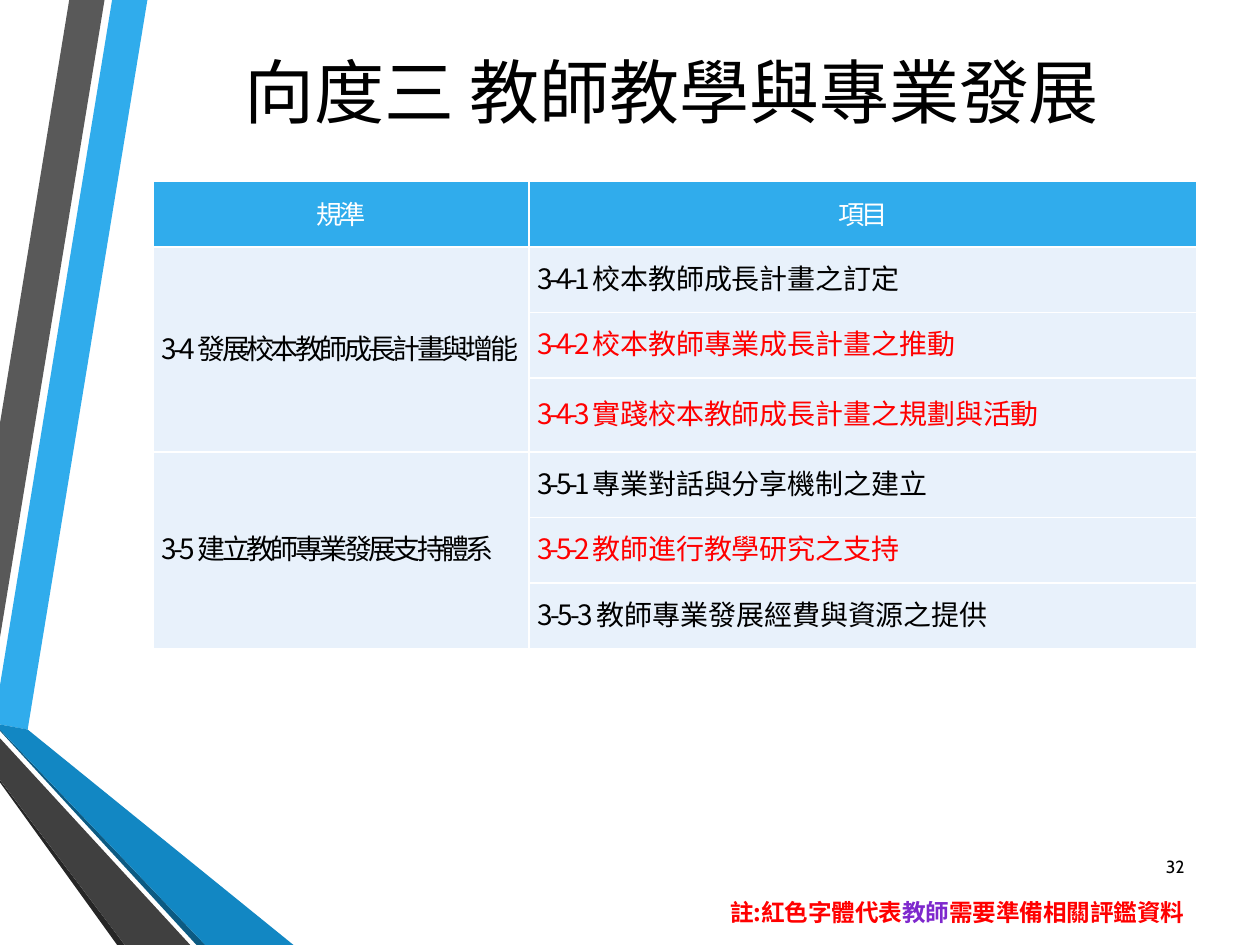
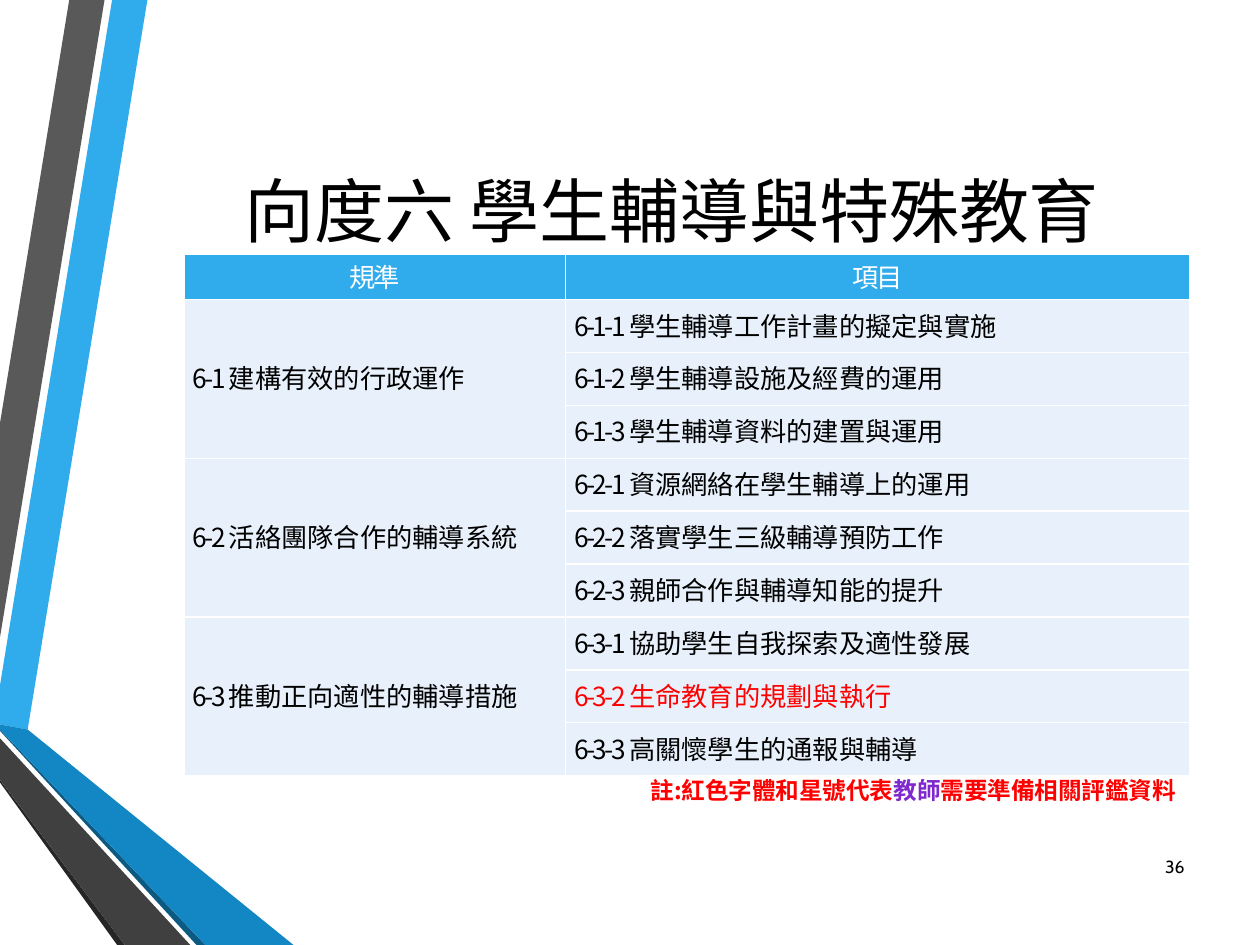
"""Build two school evaluation slides: criteria tables beside angled ribbons."""
from lxml import etree
from pptx import Presentation
from pptx.dml.color import RGBColor
from pptx.enum.text import MSO_ANCHOR, PP_ALIGN
from pptx.oxml.ns import qn
from pptx.util import Inches, Pt

CENTER, RIGHT, JUSTIFY = PP_ALIGN.CENTER, PP_ALIGN.RIGHT, PP_ALIGN.JUSTIFY
MIDDLE = MSO_ANCHOR.MIDDLE
TITLE_FONT, BODY_FONT = "Cabin", "Noto Sans CJK SC"
TITLE_ONLY = 5
COLORS = {
    "sky": "30ACEC", "gray": "595959", "shade": "262626", "navy": "0C5A82",
    "blue": "1287C3", "dark": "404040", "pale": "E8F1FB", "white": "FFFFFF",
    "black": "000000", "red": "FF0000", "purple": "7E28CD",
}
RIBBONS = [
    ("sky", [(0, 5.44), (0, 5.75), (0.22, 5.79), (1.17, 0), (0.89, 0)]),
    ("gray", [(0.83, 0), (0.55, 0), (0, 3.36), (0, 5.06)]),
    ("shade", [(0, 6.19), (0, 6.21), (0.93, 7.5), (0.99, 7.5)]),
    ("navy", [(0, 5.79), (0, 5.8), (1.56, 7.5), (1.63, 7.5)]),
    ("blue", [(0, 5.79), (1.63, 7.5), (2.33, 7.5), (0.22, 5.79), (0, 5.75)]),
    ("dark", [(0, 6.19), (0.99, 7.5), (1.51, 7.5), (0, 5.86)]),
]
HEADERS = ["規準", "項目"]
NOTE_END = [("教師", "purple"), ("需要準備相關評鑑資料", "red")]
SLIDES = [
    {
        "title": "向度三 教師教學與專業發展", "title_top": 0, "number": "32",
        "at": (1.22, 1.44), "cols": (2.98, 5.3),
        "rows": [0.52] * 3 + [0.59] + [0.52] * 3,
        "size": 16, "spacing": -2, "name_spacing": -2, "margins": (0.06, 0),
        "groups": [
            ("3-4", "發展校本教師成長計畫與增能",
             ["校本教師成長計畫之訂定", "校本教師專業成長計畫之推動",
              "實踐校本教師成長計畫之規劃與活動"]),
            ("3-5", "建立教師專業發展支持體系",
             ["專業對話與分享機制之建立", "教師進行教學研究之支持",
              "教師專業發展經費與資源之提供"]),
        ],
        "red": {"3-4-2", "3-4-3", "3-5-2"}, "looser": {"3-5-3"},
        "note": "註:紅色字體代表", "note_at": (2.77, 7.08),
    },
    {
        "title": "向度六 學生輔導與特殊教育", "title_top": 0.94, "number": "36",
        "at": (1.46, 2.02), "cols": (3.03, 4.95), "rows": [0.35] + [0.42] * 9,
        "size": 15, "spacing": -1.5, "name_spacing": 0, "margins": (0.07, 0.04),
        "groups": [
            ("6-1", "建構有效的行政運作",
             ["學生輔導工作計畫的擬定與實施", "學生輔導設施及經費的運用",
              "學生輔導資料的建置與運用"]),
            ("6-2", "活絡團隊合作的輔導系統",
             ["資源網絡在學生輔導上的運用", "落實學生三級輔導預防工作",
              "親師合作與輔導知能的提升"]),
            ("6-3", "推動正向適性的輔導措施",
             ["協助學生自我探索及適性發展", "生命教育的規劃與執行",
              "高關懷學生的通報與輔導"]),
        ],
        "red": {"6-3-2"}, "looser": set(),
        "note": "註:紅色字體和星號代表", "note_at": (2.7, 6.11),
    },
]


def rgb(name):
    return RGBColor.from_string(COLORS[name])


def add_run(p, text, size, color, font=BODY_FONT, bold=False, spacing=0):
    r = p.add_run()
    r.text = text
    r.font.size, r.font.bold, r.font.name = Pt(size), bold, font
    r.font.color.rgb = rgb(color)
    rPr = r.font._element
    if spacing:
        rPr.set("spc", str(int(spacing * 100)))
    if font == BODY_FONT:
        ea = etree.Element(qn("a:ea"), typeface=font)
        rPr.find(qn("a:latin")).addnext(ea)


def add_ribbons(slide):
    for color, points in RIBBONS:
        start, *rest = [(Inches(x), Inches(y)) for x, y in points]
        builder = slide.shapes.build_freeform(*start)
        builder.add_line_segments(rest, close=True)
        sp = builder.convert_to_shape()
        sp.shadow.inherit = False
        sp.fill.solid()
        sp.fill.fore_color.rgb = rgb(color)
        sp.line.fill.background()


def add_title(slide, text, top):
    sp = slide.shapes.title
    sp.left, sp.top, sp.width, sp.height = map(Inches, (1.22, top, 8.22, 1.44))
    tf = sp.text_frame
    tf.vertical_anchor = MIDDLE
    p = tf.paragraphs[0]
    p.alignment = CENTER
    add_run(p, text, 40, "black", TITLE_FONT)


def add_text(slide, at, runs, size, font=BODY_FONT, bold=False, anchor=None):
    tf = slide.shapes.add_textbox(*map(Inches, at)).text_frame
    tf.word_wrap = True
    tf.vertical_anchor = anchor
    p = tf.paragraphs[0]
    p.alignment = RIGHT
    for text, color in runs:
        add_run(p, text, size, color, font, bold)


def format_cell(cell, fill, align, margins=(0.07, 0.04), hanging=False):
    cell.fill.solid()
    cell.fill.fore_color.rgb = rgb(fill)
    cell.vertical_anchor = MIDDLE
    cell.margin_left = cell.margin_right = Inches(margins[0])
    cell.margin_top = cell.margin_bottom = Inches(margins[1])
    p = cell.text_frame.paragraphs[0]
    p.alignment, p.line_spacing = align, Pt(20)
    if hanging:
        pPr = p._p.get_or_add_pPr()
        pPr.set("marL", str(Inches(0.49)))
        pPr.set("indent", str(-Inches(0.49)))
    return p


def add_criteria(slide, data):
    cols, rows = data["cols"], data["rows"]
    box = map(Inches, (*data["at"], sum(cols), sum(rows)))
    table = slide.shapes.add_table(len(rows), len(cols), *box).table
    table.horz_banding = False
    for column, width in zip(table.columns, cols):
        column.width = Inches(width)
    for row, height in zip(table.rows, rows):
        row.height = Inches(height)

    size, spacing = data["size"], data["spacing"]
    for i, header in enumerate(HEADERS):
        p = format_cell(table.cell(0, i), "sky", CENTER)
        add_run(p, header, 15, "white", spacing=spacing)

    top = 1
    for code, name, items in data["groups"]:
        cell = table.cell(top, 0)
        cell.merge(table.cell(top + len(items) - 1, 0))
        p = format_cell(cell, "pale", JUSTIFY, data["margins"])
        add_run(p, f"{code} ", size, "black", spacing=spacing)
        add_run(p, name, size, "black", spacing=data["name_spacing"])
        for i, item in enumerate(items):
            item_code = f"{code}-{i + 1}"
            color = "red" if item_code in data["red"] else "black"
            code_spacing = -1.5 if item_code in data["looser"] else spacing
            p = format_cell(table.cell(top + i, 1), "pale", JUSTIFY, hanging=True)
            add_run(p, f"{item_code} ", size, color, spacing=code_spacing)
            add_run(p, item, size, color)
        top += len(items)


def main():
    prs = Presentation()
    prs.slide_width, prs.slide_height = Inches(10), Inches(7.5)
    for data in SLIDES:
        slide = prs.slides.add_slide(prs.slide_layouts[TITLE_ONLY])
        add_ribbons(slide)
        add_title(slide, data["title"], data["title_top"])
        add_text(slide, (9.03, 6.68, 0.47, 0.4), [(data["number"], "black")],
                 10, TITLE_FONT, anchor=MIDDLE)
        add_criteria(slide, data)
        add_text(slide, (*data["note_at"], 6.73, 0.33),
                 [(data["note"], "red"), *NOTE_END], 13.5, bold=True)
    prs.save("out.pptx")


if __name__ == "__main__":
    main()
